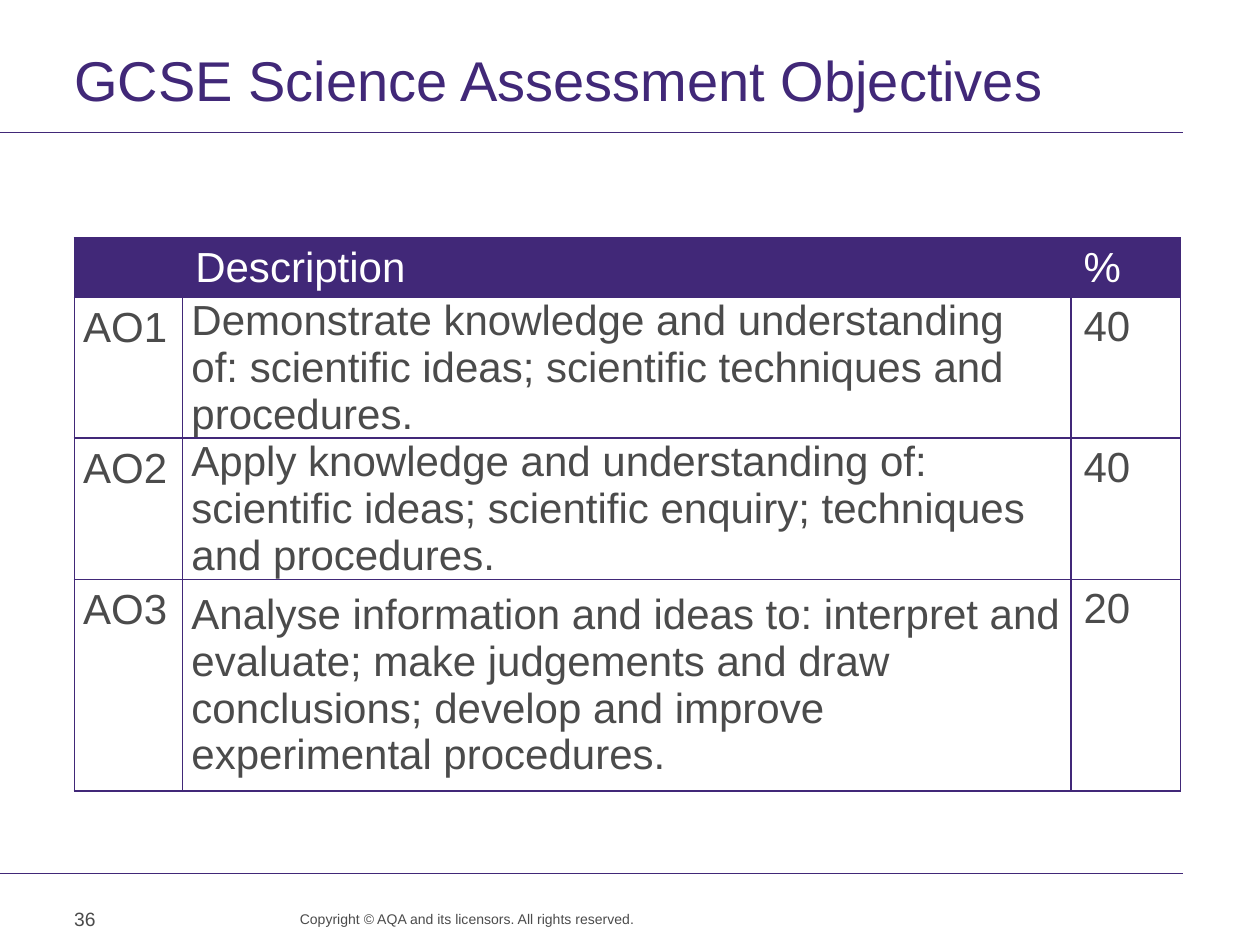
from dataclasses import dataclass
from lxml.etree import SubElement
from pptx import Presentation
from pptx.dml.color import RGBColor
from pptx.enum.shapes import MSO_CONNECTOR
from pptx.enum.text import MSO_ANCHOR, PP_ALIGN
from pptx.oxml import parse_xml
from pptx.oxml.ns import nsdecls, qn
from pptx.util import Inches, Pt


@dataclass(frozen=True)
class Theme:
    font: str = "Arial"
    purple: str = "412878"
    grey: str = "4B4B4B"
    white: str = "FFFFFF"
    title_size: int = 32
    table_size: int = 24
    number_size: int = 11
    copyright_size: int = 8
    rule_width: float = 0.6
    border_width: int = 1


theme = Theme()


def write_text(text_frame, text, size, color):
    text_frame.text = text
    paragraph = text_frame.paragraphs[0]
    paragraph.alignment = PP_ALIGN.LEFT
    for run in paragraph.runs:
        run.font.name = theme.font
        run.font.size = Pt(size)
        run.font.bold = False
        run.font.color.rgb = RGBColor.from_string(color)
    return paragraph


def add_borders(cell):
    properties = cell._tc.get_or_add_tcPr()
    for position, side in enumerate(("lnL", "lnR", "lnT", "lnB")):
        border = parse_xml(
            f'<a:{side} {nsdecls("a")} w="{Pt(theme.border_width)}">'
            f'<a:solidFill><a:srgbClr val="{theme.purple}"/></a:solidFill></a:{side}>'
        )
        properties.insert(position, border)


presentation = Presentation()
presentation.slide_width = Inches(10)
presentation.slide_height = Inches(7.5)
slide = presentation.slides.add_slide(presentation.slide_layouts[5])

for rule_top in (1.05, 6.93):
    rule = slide.shapes.add_connector(
        MSO_CONNECTOR.STRAIGHT, 0, Inches(rule_top), Inches(9.39), Inches(rule_top)
    )
    rule.line.color.rgb = RGBColor.from_string(theme.purple)
    rule.line.width = Pt(theme.rule_width)
    SubElement(rule._element.spPr, qn("a:effectLst"))

title = slide.shapes.title
title.left, title.top = Inches(0.49), Inches(0.44)
title.width, title.height = Inches(9), Inches(0.52)
title.text_frame.vertical_anchor = MSO_ANCHOR.MIDDLE
paragraph = write_text(
    title.text_frame, "GCSE Science Assessment Objectives", theme.title_size, theme.purple
)
paragraph.line_spacing = Pt(28)

rows = [
    ("", "Description", "%"),
    ("AO1", "Demonstrate knowledge and understanding of: scientific ideas; "
            "scientific techniques and procedures.", "40"),
    ("AO2", "Apply knowledge and understanding of: scientific ideas; "
            "scientific enquiry; techniques and procedures.", "40"),
    ("AO3", "Analyse information and ideas to: interpret and evaluate; make judgements "
            "and draw conclusions; develop and improve experimental procedures.", "20"),
]
column_widths = (0.86, 7.05, 0.87)
row_heights = (0.47, 1.11, 1.12, 1.68)

table = slide.shapes.add_table(
    len(rows), len(column_widths), Inches(0.59), Inches(1.89),
    Inches(sum(column_widths)), Inches(sum(row_heights)),
).table
table.first_row = False
table.horz_banding = False
for column, width in zip(table.columns, column_widths):
    column.width = Inches(width)
for row, height in zip(table.rows, row_heights):
    row.height = Inches(height)

for row_index, texts in enumerate(rows):
    is_header = row_index == 0
    for column_index, text in enumerate(texts):
        cell = table.cell(row_index, column_index)
        paragraph = write_text(
            cell.text_frame, text, theme.table_size, theme.white if is_header else theme.grey
        )
        if is_header:
            cell.fill.solid()
            cell.fill.fore_color.rgb = RGBColor.from_string(theme.purple)
        else:
            cell.fill.background()
            if column_index < 2:
                cell.margin_left = cell.margin_right = Inches(0.07)
                cell.margin_top = cell.margin_bottom = 0
            if column_index == 0:
                paragraph.line_spacing = 1.15
            elif column_index == 1:
                cell.vertical_anchor = MSO_ANCHOR.MIDDLE
        add_borders(cell)

copyright_box = slide.shapes.add_textbox(Inches(2.38), Inches(7.23), Inches(2.93), Inches(0.26))
copyright_frame = copyright_box.text_frame
copyright_frame.word_wrap = True
copyright_frame.margin_left = copyright_frame.margin_top = copyright_frame.margin_bottom = 0
write_text(
    copyright_frame, "Copyright © AQA and its licensors. All rights reserved.",
    theme.copyright_size, theme.grey,
)

number_box = slide.shapes.add_textbox(Inches(0.49), Inches(7.15), Inches(0.76), Inches(0.4))
number_box.text_frame.word_wrap = True
write_text(number_box.text_frame, "36", theme.number_size, theme.grey)

presentation.save("out.pptx")
